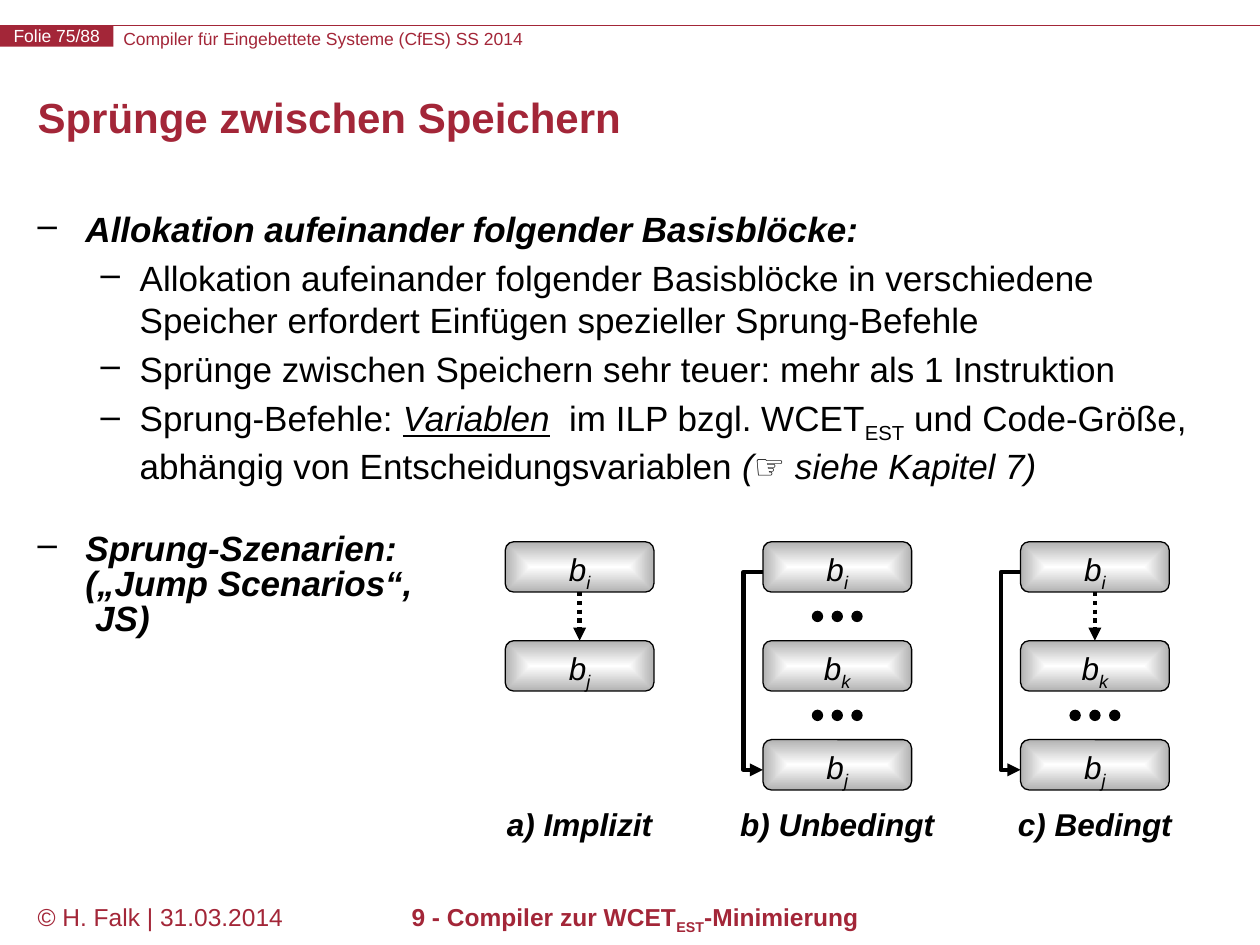
from dataclasses import dataclass
from itertools import pairwise

from pptx import Presentation, oxml, util as u
from pptx.dml.color import RGBColor
from pptx.enum import dml, shapes, text
from pptx.oxml import ns

HUES = {"red": "A32638", "ink": "000000", "pale": "FFFFFF", "grey": "B2B2B2"}
WIDE, HIGH = u.Inches(10), u.Inches(7.5)
LEFT, TOP = 40.1, 57.33
STEP, PITCH = 20.45, 10.47
WIDTH, HEIGHT = 11.8, 5.33


@dataclass
class Run:
    words: str
    bold: bool = False
    ital: bool = False
    under: bool = False
    sub: bool = False


@dataclass
class Para:
    runs: list[Run]
    hang: tuple[float, float] | None = None
    before: float = 0
    line: float | None = None


@dataclass
class Case:
    label: str
    width: float
    blocks: str
    links: tuple[str, ...]
    jump: bool


CASES = [
    Case("a) Implizit", 13.7, "ij", ("next",), False),
    Case("b) Unbedingt", 17.6, "ikj", ("dots", "dots"), True),
    Case("c) Bedingt", 14.4, "ikj", ("next", "dots"), True),
]
OUTER, INNER = (0.38, -0.38), (0.81, -0.31)
BODY = [
    Para([Run("Allokation aufeinander folgender Basisblöcke:", True, True)], OUTER),
    Para([Run("Allokation aufeinander folgender Basisblöcke in verschiedene "
              "Speicher erfordert Einfügen spezieller Sprung-Befehle")], INNER, 4),
    Para([Run("Sprünge zwischen Speichern sehr teuer: mehr als 1 Instruktion")], INNER, 4),
    Para([Run("Sprung-Befehle: "), Run("Variablen", ital=True, under=True),
          Run("  im ILP bzgl. WCET"), Run("EST", sub=True),
          Run(" und Code-Größe, abhängig von Entscheidungsvariablen "),
          Run("(☞ siehe Kapitel 7)", ital=True)], INNER, 4),
    Para([Run("Sprung-Szenarien:\n(„Jump Scenarios“,\n JS)", True, True)], OUTER, 27, 20),
]
FOOT = [Run("9 - Compiler zur WCET", True), Run("EST", True, sub=True),
        Run("-Minimierung", True)]

deck = Presentation()
deck.slide_width, deck.slide_height = WIDE, HIGH
slide = deck.slides.add_slide(deck.slide_layouts[6])


def hue(name: str) -> RGBColor:
    return RGBColor.from_string(HUES[name])


def place(x: float, y: float) -> tuple[int, int]:
    return round(WIDE * x / 100), round(HIGH * y / 100)


def area(x: float, y: float, w: float, h: float) -> tuple[int, ...]:
    return place(x, y) + place(w, h)


def write(shape, paras: list[Para], size: float = 18, color: str = "ink",
          align: str = "LEFT", anchor: str = "TOP", wrap: bool = True, inset: bool = True):
    frame = shape.text_frame
    frame.word_wrap = wrap
    frame.vertical_anchor = text.MSO_ANCHOR[anchor]
    if not inset:
        frame.margin_left = frame.margin_right = frame.margin_top = frame.margin_bottom = 0
    for n, item in enumerate(paras):
        para = frame.add_paragraph() if n else frame.paragraphs[0]
        para.alignment = text.PP_ALIGN[align]
        para.space_before = u.Pt(item.before)
        if item.line:
            para.line_spacing = u.Pt(item.line)
        if item.hang:
            props = para._p.get_or_add_pPr()
            props.set("marL", str(u.Inches(item.hang[0])))
            props.set("indent", str(u.Inches(item.hang[1])))
            props.append(oxml.parse_xml(f'<a:buChar {ns.nsdecls("a")} char="–"/>'))
        for part in item.runs:
            for k, words in enumerate(part.words.split("\n")):
                if k:
                    para.add_line_break()
                run = para.add_run()
                run.text = words
                font = run.font
                font.name, font.size = "Arial", u.Pt(size)
                font.bold, font.italic, font.underline = part.bold, part.ital, part.under
                font.color.rgb = hue(color)
                if part.sub:
                    run._r.get_or_add_rPr().set("baseline", "-25000")


def label(spot: tuple[int, ...], paras: list[Para], **style):
    write(slide.shapes.add_textbox(*spot), paras, **style)


def solid(owner, kind: str, spot: tuple[int, ...], fill: str, edge: str | None = None):
    shape = owner.shapes.add_shape(shapes.MSO_SHAPE[kind], *spot)
    shape.shadow.inherit = False
    shape.fill.solid()
    shape.fill.fore_color.rgb = hue(fill)
    if edge:
        shape.line.color.rgb = hue(edge)
        shape.line.width = u.Pt(0.75)
    else:
        shape.line.fill.background()
    return shape


def ink(shape, color: str, width: float, head: bool = False):
    shape.line.color.rgb = hue(color)
    shape.line.width = u.Pt(width)
    if head:
        shape.line._get_or_add_ln().append(
            oxml.parse_xml(f'<a:tailEnd {ns.nsdecls("a")} type="triangle"/>'))


def rule(start: tuple[int, int], end: tuple[int, int], color: str, width: float,
         dash: bool = False):
    line = slide.shapes.add_connector(shapes.MSO_CONNECTOR.STRAIGHT, *start, *end)
    if dash:
        line.line.dash_style = dml.MSO_LINE.ROUND_DOT
    ink(line, color, width, head=dash)
    line.element.spPr.append(oxml.parse_xml(f'<a:effectLst {ns.nsdecls("a")}/>'))


def block(x: float, y: float, index: str):
    shape = solid(slide, "ROUNDED_RECTANGLE", area(x, y, WIDTH, HEIGHT), "pale", "ink")
    shape.adjustments[0] = 0.17
    props = shape.element.spPr
    stops = "".join(f'<a:gs pos="{pos}"><a:srgbClr val="{HUES[name]}"/></a:gs>'
                    for pos, name in ((0, "pale"), (100000, "grey")))
    props.replace(props.find(ns.qn("a:solidFill")), oxml.parse_xml(
        f'<a:gradFill {ns.nsdecls("a")}><a:gsLst>{stops}</a:gsLst><a:path path="rect">'
        '<a:fillToRect l="50000" t="50000" r="50000" b="50000"/></a:path></a:gradFill>'))
    write(shape, [Para([Run("b", ital=True), Run(index, ital=True, sub=True)])],
          align="CENTER", wrap=False)


def dots(x: float, y: float):
    group = slide.shapes.add_group_shape()
    for n in (-1, 0, 1):
        solid(group, "OVAL", area(x + 1.57 * n - 0.4, y - 0.53, 0.8, 1.07), "ink", "ink")


def jump(x: float, top: float, end: float):
    out = x - 1.55
    form = slide.shapes.build_freeform(*place(x, top))
    form.add_line_segments([place(out, top), place(out, end), place(x, end)], close=False)
    shape = form.convert_to_shape()
    shape.shadow.inherit = False
    shape.fill.background()
    ink(shape, "ink", 2.5, head=True)


def draw(col: int, case: Case):
    x = LEFT + col * STEP
    mid = x + WIDTH / 2
    rows = [TOP + n * PITCH for n in range(len(case.blocks))]
    for y, index in zip(rows, case.blocks):
        block(x, y, index)
    for (y, below), link in zip(pairwise(rows), case.links):
        if link == "next":
            rule(place(mid, y + HEIGHT), place(mid, below), "ink", 2.5, dash=True)
        else:
            dots(mid, (y + HEIGHT + below) / 2)
    if case.jump:
        jump(x, rows[0] + 0.6 * HEIGHT, rows[-1] + 0.6 * HEIGHT)
    label(area(mid - case.width / 2, 84.53, case.width, HEIGHT),
          [Para([Run(case.label, True, True)])], align="CENTER", wrap=False)


rule(place(0, 2.67), place(100, 2.67), "red", 0.75)
label(area(9.8, 2.93, 66, 2.27),
      [Para([Run("Compiler für Eingebettete Systeme (CfES) SS 2014")])],
      size=10, color="red", inset=False)
write(solid(slide, "RECTANGLE", area(0, 2.67, 9, 2.27), "red"),
      [Para([Run("Folie 75/88")])], size=10, color="pale", align="CENTER",
      anchor="MIDDLE", wrap=False, inset=False)
label(area(2, 94.8, 22, 6.67), [Para([Run("© H. Falk | 31.03.2014")])], size=14, color="red")
label(area(20.1, 94.8, 60.6, 6.67), [Para(FOOT)], size=14, color="red", align="CENTER")
label(area(2, 8, 96.1, 9.6), [Para([Run("Sprünge zwischen Speichern", True)], line=24)],
      size=24, color="red", anchor="MIDDLE")
label(area(2, 21.33, 96.1, 72.8), BODY, size=20)
for col, case in enumerate(CASES):
    draw(col, case)

deck.save("out.pptx")
